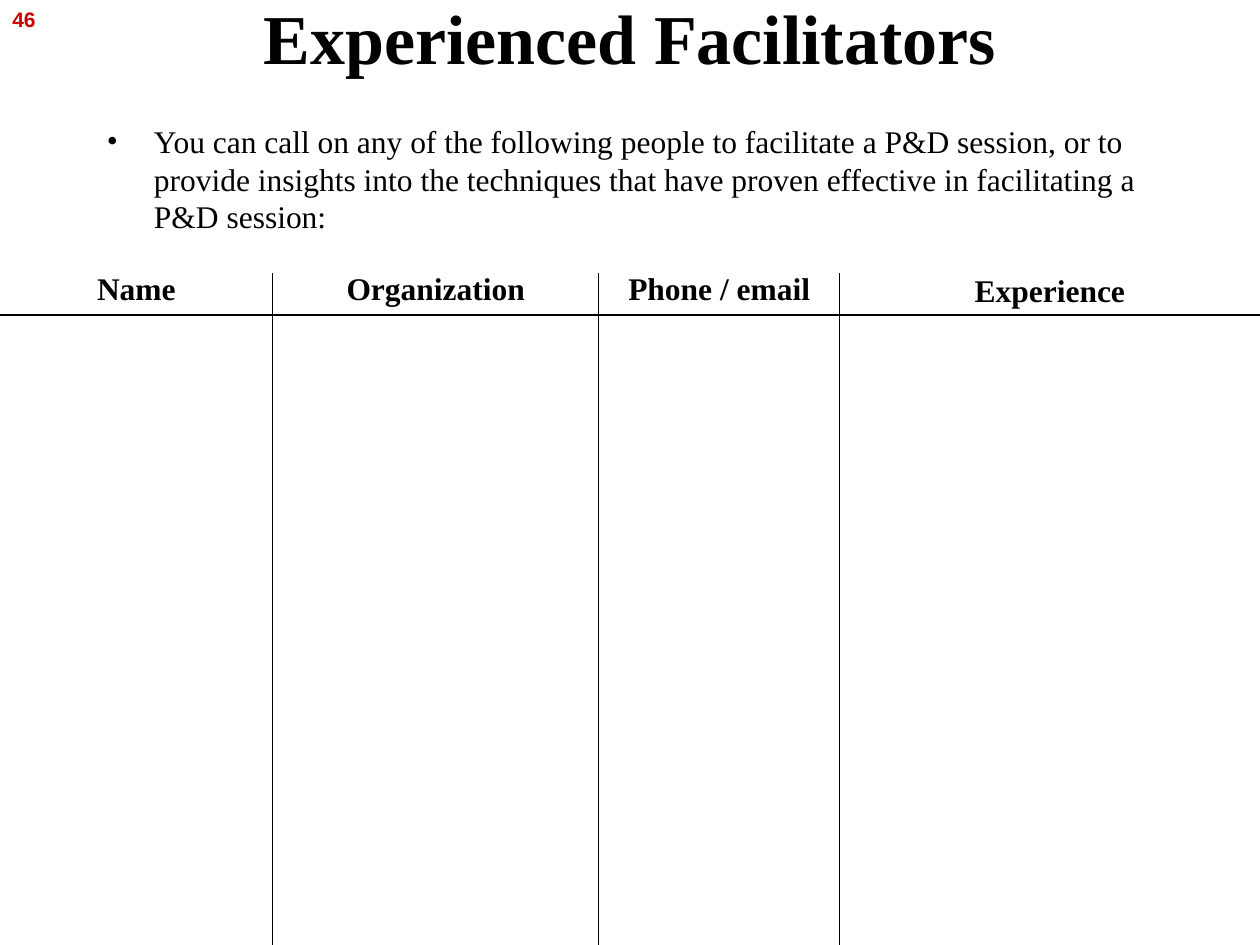
"""Build the Experienced Facilitators slide with its empty contact grid."""
from dataclasses import dataclass
from lxml.etree import SubElement
from pptx import Presentation
from pptx.dml.color import RGBColor
from pptx.enum.shapes import MSO_CONNECTOR
from pptx.enum.text import MSO_ANCHOR, PP_ALIGN
from pptx.oxml.ns import qn
from pptx.util import Cm, Pt


@dataclass(frozen=True)
class Theme:
    ink: RGBColor = RGBColor(0, 0, 0)
    accent: RGBColor = RGBColor(0xCC, 0, 0)
    serif: str = "Times New Roman"
    sans: str = "Arial"
    title: int = 40
    text: int = 18
    number: int = 12
    rule: float = 0.75


theme = Theme()


def write(sp, text, size, font=theme.serif, color=theme.ink, bold=True,
          align=PP_ALIGN.CENTER, anchor=MSO_ANCHOR.TOP):
    tf = sp.text_frame
    tf.word_wrap = True
    tf.vertical_anchor = anchor
    p = tf.paragraphs[0]
    p.alignment = align
    p.space_before = Pt(0)
    r = p.add_run()
    r.text = text
    r.font.name = font
    r.font.size = Pt(size)
    r.font.bold = bold
    r.font.color.rgb = color
    return p


def add_rule(shapes, x1, y1, x2, y2):
    line = shapes.add_connector(MSO_CONNECTOR.STRAIGHT, Cm(x1), Cm(y1), Cm(x2), Cm(y2))
    line.line.color.rgb = theme.ink
    line.line.width = Pt(theme.rule)
    SubElement(line._element.spPr, qn("a:effectLst"))


prs = Presentation()
prs.slide_width, prs.slide_height = Cm(25.4), Cm(19.05)
s = prs.slides.add_slide(prs.slide_layouts[1])
title, body = s.placeholders

title.left, title.top, title.width, title.height = Cm(1.9), Cm(-0.85), Cm(21.6), Cm(3.18)
write(title, "Experienced Facilitators", theme.title, anchor=MSO_ANCHOR.MIDDLE)

number = s.shapes.add_textbox(Cm(0), Cm(0), Cm(1.9), Cm(0.76))
write(number, "46", theme.number, theme.sans, theme.accent, align=PP_ALIGN.LEFT)

body.left, body.top, body.width, body.height = Cm(1.9), Cm(2.33), Cm(21.6), Cm(3.18)
p = write(
    body,
    "You can call on any of the following people to facilitate a P&D session, "
    "or to provide insights into the techniques that have proven effective in "
    "facilitating a P&D session:",
    theme.text, bold=False, align=PP_ALIGN.LEFT)
pPr = p._p.get_or_add_pPr()
pPr.set("marL", str(Cm(0.95)))
pPr.set("indent", str(Cm(-0.95)))
SubElement(pPr, qn("a:buFont"), typeface=theme.serif)
SubElement(pPr, qn("a:buChar"), char="•")

edges = [0, 5.5, 12.07, 16.93, 25.4]
headers = [("Name", 5.29), ("Organization", 5.29), ("Phone / email", 5.29), ("Experience", 5.33)]

add_rule(s.shapes, edges[0], 6.35, edges[-1], 6.35)
for x in edges[1:-1]:
    add_rule(s.shapes, x, 5.5, x, 19.05)

for left, right, (label, top) in zip(edges, edges[1:], headers):
    header = s.shapes.add_textbox(Cm(left), Cm(top), Cm(right - left), Cm(1.02))
    write(header, label, theme.text)

prs.save("out.pptx")
